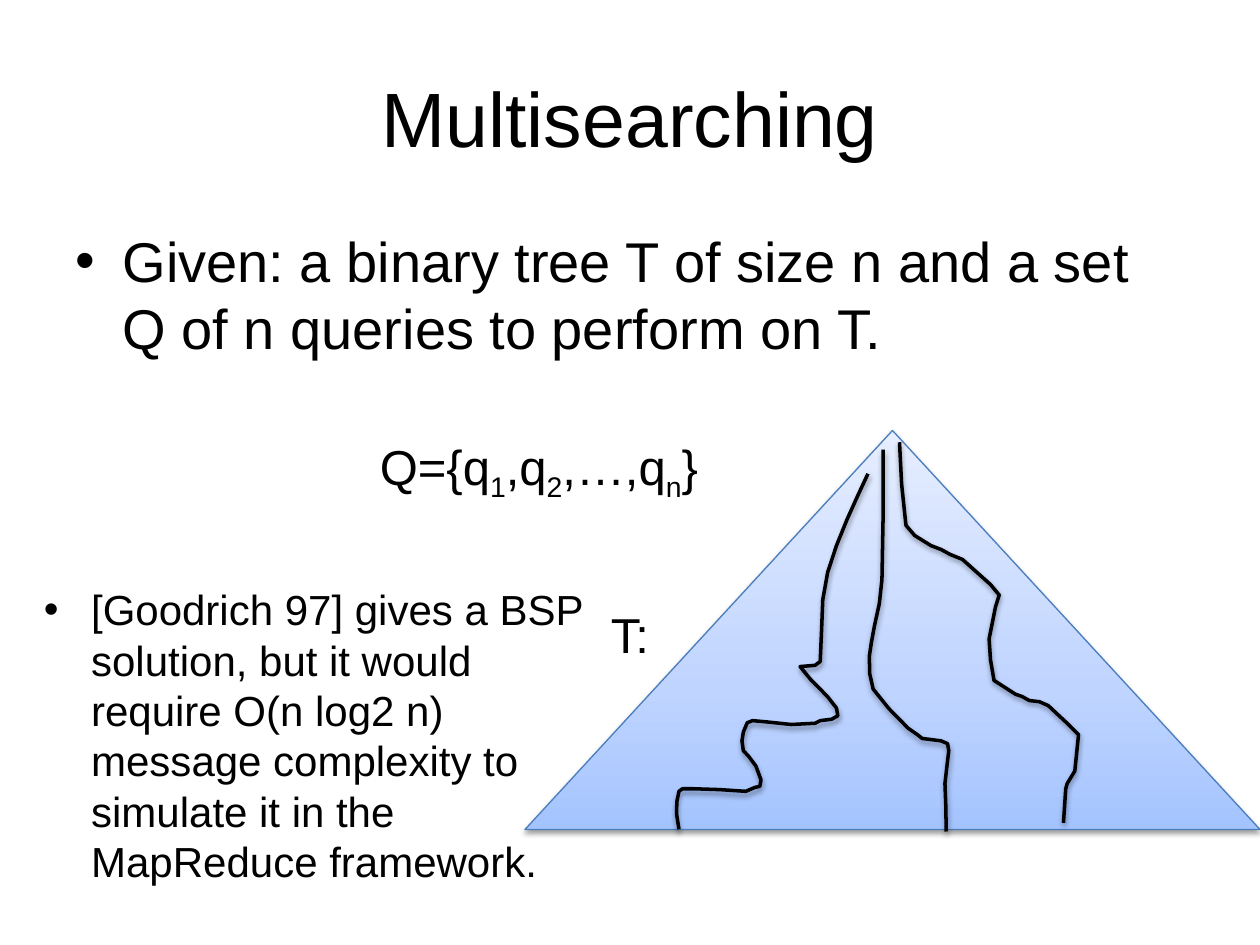
from copy import deepcopy
from dataclasses import dataclass

from lxml.etree import SubElement
from pptx import Presentation
from pptx.dml.color import RGBColor as RGB
from pptx.enum.shapes import MSO_SHAPE as Shape
from pptx.enum.text import MSO_ANCHOR as Anchor, MSO_AUTO_SIZE as AutoSize, PP_ALIGN as Align
from pptx.oxml.ns import qn
from pptx.util import Pt


@dataclass(frozen=True)
class Theme:
    font: str = "Arial"
    ink: RGB = RGB(0, 0, 0)
    edge: RGB = RGB.from_string("4B7EBC")
    gradient: tuple = ((0, "A4C4FF"), (0.35, "BFD4FF"), (1, "E6EEFF"))
    title: int = 44
    body: int = 32
    label: int = 28
    note: int = 24
    indent: int = 27
    edge_width: float = 0.75
    path_width: float = 2


# Search paths from the root to a leaf, as (x, y) in points.
LEFT_PATH = (
    (496, 270.7), (490.3, 283), (484, 297), (478, 311.8), (473, 327), (470.2, 342.7),
    (469.5, 360), (468.7, 378), (465.8, 380.2), (457.2, 380.9), (463.7, 388.8),
    (470.2, 395.3), (473, 398.2), (478, 404.6), (478.8, 409), (475.2, 411),
    (468.7, 411.8), (465.8, 413.3), (452.2, 414), (438, 412.5), (430, 411.8),
    (427, 413), (424.8, 418.3), (424, 423.4), (424.8, 429), (427.7, 432),
    (432, 437.8), (434.9, 445.7), (434.2, 449.3), (431.3, 450), (426.2, 452.2),
    (411, 451.2), (396, 450.7), (390, 450.7), (388, 452.2), (386.8, 458),
    (386.6, 465), (388, 473.8),
)
MIDDLE_PATH = (
    (504.7, 257), (504.7, 294), (504, 331.2), (502.5, 345), (499.7, 357.8),
    (498, 367), (496.8, 375), (497, 385), (499, 393.8), (508, 405), (519, 416.2),
    (524.2, 419.8), (527, 422), (537.8, 423.4), (541.5, 425), (542.2, 429),
    (541, 439), (540, 447.8), (540.5, 461), (540.7, 475.2),
)
RIGHT_PATH = (
    (514, 252.7), (515.2, 276.5), (517.7, 300.2), (522.7, 306), (532, 311.8),
    (537.8, 314), (542.9, 316.8), (550, 319.7), (566, 334), (571, 340),
    (568.8, 347), (567.4, 354.2), (565.2, 365), (566, 377), (568, 388.8),
    (580.3, 396.7), (584, 398), (588.2, 400.3), (594, 401), (599, 403.2),
    (609.8, 413.3), (616.3, 419.8), (614.2, 440.6), (609.8, 447.8), (609, 450.7),
    (607.7, 470.2),
)


class SlideBuilder:
    def __init__(self, slide, theme):
        self.slide, self.theme = slide, theme

    def style(self, p, size):
        for r in p.runs:
            r.font.name, r.font.size = self.theme.font, Pt(size)
            r.font.color.rgb = self.theme.ink

    def title(self, text, *box):
        sp = self.slide.shapes.title
        sp.left, sp.top, sp.width, sp.height = map(Pt, box)
        tf = sp.text_frame
        tf.text, tf.vertical_anchor = text, Anchor.MIDDLE
        tf.paragraphs[0].alignment = Align.CENTER
        self.style(tf.paragraphs[0], self.theme.title)

    def bullet(self, text, size, *box):
        tf = self.slide.shapes.add_textbox(*map(Pt, box)).text_frame
        tf.word_wrap = True
        p = tf.paragraphs[0]
        p.text = text
        pPr = p._p.get_or_add_pPr()
        pPr.set("marL", str(Pt(self.theme.indent)))
        pPr.set("indent", str(-Pt(self.theme.indent)))
        SubElement(pPr, qn("a:buFont"), typeface=self.theme.font)
        SubElement(pPr, qn("a:buChar"), char="•")
        self.style(p, size)

    def label(self, text, *box):
        """Add one unwrapped line; the character after each "_" is a subscript."""
        tf = self.slide.shapes.add_textbox(*map(Pt, box)).text_frame
        tf.word_wrap, tf.auto_size = False, AutoSize.SHAPE_TO_FIT_TEXT
        p = tf.paragraphs[0]
        first, *parts = text.split("_")
        p.add_run().text = first
        for part in parts:
            sub = p.add_run()
            sub.text = part[0]
            sub.font._element.set("baseline", "-25000")
            p.add_run().text = part[1:]
        self.style(p, self.theme.label)

    def outline(self, sp, color, width):
        """Set the line and the soft shadow just below it."""
        sp.line.color.rgb, sp.line.width = color, Pt(width)
        sp.shadow.inherit = False
        effects = sp._element.spPr.find(qn("a:effectLst"))
        shadow = SubElement(effects, qn("a:outerShdw"), blurRad=str(Pt(3.1)),
                            dist=str(Pt(1.6)), dir="5400000", rotWithShape="0")
        black = SubElement(shadow, qn("a:srgbClr"), val="000000")
        SubElement(black, qn("a:alpha"), val="38000")

    def tree(self, *box):
        sp = self.slide.shapes.add_shape(Shape.ISOSCELES_TRIANGLE, *map(Pt, box))
        sp.fill.gradient()
        sp.fill.gradient_angle = 90
        stops = sp._element.spPr.find(qn("a:gradFill")).find(qn("a:gsLst"))
        stops.append(deepcopy(stops[0]))
        for stop, (position, color) in zip(sp.fill.gradient_stops, self.theme.gradient):
            stop.position, stop.color.rgb = position, RGB.from_string(color)
        self.outline(sp, self.theme.edge, self.theme.edge_width)

    def search_path(self, points):
        start, *rest = [(Pt(x), Pt(y)) for x, y in points]
        builder = self.slide.shapes.build_freeform(*start)
        builder.add_line_segments(rest, close=False)
        sp = builder.convert_to_shape()
        sp.fill.background()
        self.outline(sp, self.theme.ink, self.theme.path_width)
        SubElement(sp._element.spPr.find(qn("a:ln")), qn("a:round"))


def main():
    prs = Presentation()
    prs.slide_width, prs.slide_height = Pt(720), Pt(540)
    theme = Theme()
    s = SlideBuilder(prs.slides.add_slide(prs.slide_layouts[5]), theme)

    s.title("Multisearching", 36, 21.6, 648, 90)
    s.bullet("Given: a binary tree T of size n and a set Q of n queries to perform on T.",
             theme.body, 36, 126, 648, 356.4)
    s.tree(300, 246, 420, 228)
    s.label("T:", 342, 342, 36.7, 41)
    for points in (RIGHT_PATH, MIDDLE_PATH, LEFT_PATH):
        s.search_path(points)
    s.label("Q={q_1,q_2,…,q_n}", 210, 246, 207.4, 41)
    s.bullet("[Goodrich 97] gives a BSP solution, but it would require O(n log2 n) "
             "message complexity to simulate it in the MapReduce framework.",
             theme.note, 18, 330, 324, 198)

    prs.save("out.pptx")


if __name__ == "__main__":
    main()
